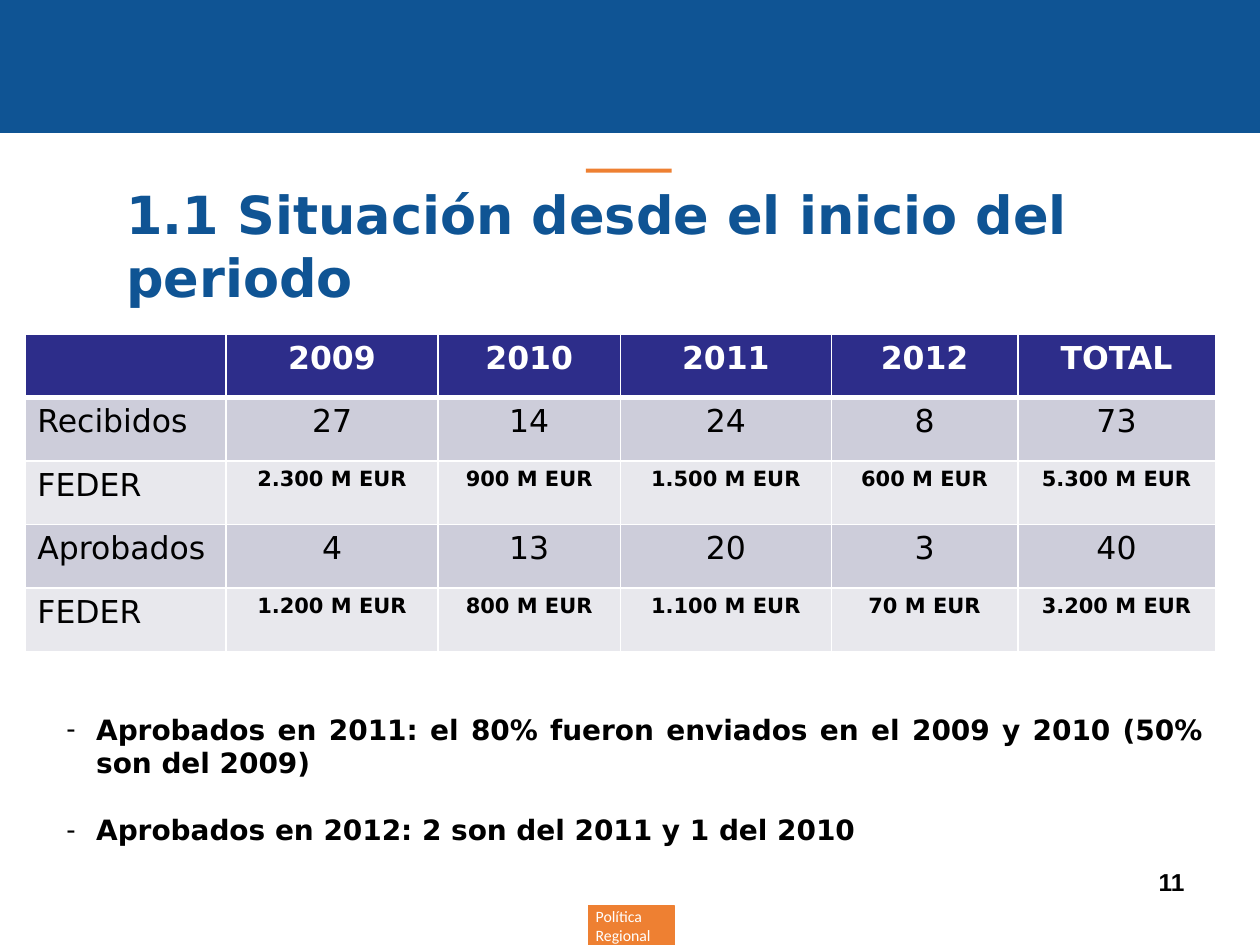
from dataclasses import dataclass

from lxml import etree
from pptx import Presentation
from pptx.dml.color import RGBColor
from pptx.enum.shapes import MSO_SHAPE
from pptx.enum.text import MSO_ANCHOR, PP_ALIGN
from pptx.oxml.ns import qn
from pptx.util import Cm, Pt

RECTANGLE = MSO_SHAPE.RECTANGLE
MIDDLE = MSO_ANCHOR.MIDDLE
LEFT, CENTER, RIGHT, JUSTIFY = PP_ALIGN.LEFT, PP_ALIGN.CENTER, PP_ALIGN.RIGHT, PP_ALIGN.JUSTIFY


@dataclass(frozen=True)
class Theme:
    blue: str = "0F5494"
    orange: str = "EE8032"
    navy: str = "2D2D8A"
    band_dark: str = "CDCDDA"
    band_light: str = "E8E8ED"
    white: str = "FFFFFF"
    black: str = "000000"
    font: str = "DejaVu Sans"
    footer_font: str = "Calibri"
    number_font: str = "Arial"
    title_size: int = 30
    table_size: int = 18
    note_size: int = 16
    number_size: int = 14
    amount_size: int = 12
    footer_size: int = 9


THEME = Theme()


def add_span(para, text, size, color, bold=True, font=THEME.font):
    span = para.add_run()
    span.text = text
    span.font.size = Pt(size)
    span.font.bold = bold
    span.font.name = font
    span.font.color.rgb = RGBColor.from_string(color)


def add_block(page, left, top, width, height, color, line_width=0):
    """Add a plain rectangle, outlined in its own colour if a line width is given."""
    block = page.shapes.add_shape(RECTANGLE, Cm(left), Cm(top), Cm(width), Cm(height))
    block.shadow.inherit = False
    block.fill.solid()
    block.fill.fore_color.rgb = RGBColor.from_string(color)
    if line_width:
        block.line.color.rgb = RGBColor.from_string(color)
        block.line.width = Pt(line_width)
    else:
        block.line.fill.background()
    block.text_frame.word_wrap = True
    block.text_frame.vertical_anchor = MIDDLE
    return block


deck = Presentation()
deck.slide_width, deck.slide_height = Cm(25.4), Cm(19.05)
page = deck.slides.add_slide(deck.slide_layouts[6])

# Header band, accent and footer tag
add_block(page, 0, 0, 25.4, 2.67, THEME.blue, 0.75)
add_block(page, 11.81, 3.4, 1.73, 0.08, THEME.orange)
footer = add_block(page, 11.86, 18.26, 1.73, 0.8, THEME.orange, 0.75)
footer.text_frame.margin_left = Cm(0.15)
para = footer.text_frame.paragraphs[0]
para.alignment = LEFT
add_span(para, "Política Regional", THEME.footer_size, THEME.white, False, THEME.footer_font)

# Title
title = page.shapes.add_textbox(Cm(1.3), Cm(3.73), Cm(22.86), Cm(2.41))
title.text_frame.word_wrap = True
title.text_frame.vertical_anchor = MIDDLE
para = title.text_frame.paragraphs[0]
para._p.get_or_add_pPr().set("marL", str(Cm(1)))
add_span(para, "1.1 Situación desde el inicio del periodo", THEME.title_size, THEME.blue)

# Table of requests received and approved, with the fund amounts
rows = [
    ["", "2009", "2010", "2011", "2012", "TOTAL"],
    ["Recibidos", "27", "14", "24", "8", "73"],
    ["FEDER", "2.300 M EUR", "900 M EUR", "1.500 M EUR", "600 M EUR", "5.300 M EUR"],
    ["Aprobados", "4", "13", "20", "3", "40"],
    ["FEDER", "1.200 M EUR", "800 M EUR", "1.100 M EUR", "70 M EUR", "3.200 M EUR"],
]
column_widths = [4.06, 4.27, 3.68, 4.25, 3.76, 3.98]
row_height = 1.28
table = page.shapes.add_table(
    len(rows), len(column_widths), Cm(0.5), Cm(6.73),
    Cm(sum(column_widths)), Cm(row_height * len(rows)),
).table
for column, width in zip(table.columns, column_widths):
    column.width = Cm(width)

for row_index, values in enumerate(rows):
    table.rows[row_index].height = Cm(row_height)
    is_header = row_index == 0
    is_amount = values[0] == "FEDER"
    if is_header:
        fill, color = THEME.navy, THEME.white
    else:
        fill, color = THEME.band_light if is_amount else THEME.band_dark, THEME.black
    edge_widths = {
        "lnL": 1,
        "lnR": 1,
        "lnT": 3 if row_index == 1 else 1,
        "lnB": 3 if is_header else 1,
    }
    for column_index, value in enumerate(values):
        cell = table.cell(row_index, column_index)
        properties = cell._tc.get_or_add_tcPr()
        for edge, width in edge_widths.items():
            line = etree.SubElement(properties, qn(f"a:{edge}"), w=str(Pt(width)))
            solid = etree.SubElement(line, qn("a:solidFill"))
            etree.SubElement(solid, qn("a:srgbClr"), val=THEME.white)
        cell.fill.solid()
        cell.fill.fore_color.rgb = RGBColor.from_string(fill)
        if value:
            is_label = column_index == 0
            small = is_amount and not is_label
            para = cell.text_frame.paragraphs[0]
            para.alignment = LEFT if is_label else CENTER
            size = THEME.amount_size if small else THEME.table_size
            add_span(para, value, size, color, is_header or small)

# Notes on the approved requests
notes = [
    "Aprobados en 2011: el 80% fueron enviados en el 2009 y 2010 (50% son del 2009)",
    "Aprobados en 2012: 2 son del 2011 y 1 del 2010",
]
notes_frame = add_block(page, 0.69, 13.51, 23.82, 4.4, THEME.white, 2).text_frame
for index, note in enumerate(notes):
    para = notes_frame.add_paragraph() if index else notes_frame.paragraphs[0]
    properties = para._p.get_or_add_pPr()
    properties.set("marL", str(Cm(1)))
    properties.set("indent", str(-Cm(0.6)))
    etree.SubElement(properties, qn("a:buFont"), typeface=THEME.number_font)
    etree.SubElement(properties, qn("a:buChar"), char="-")
    para.alignment = JUSTIFY
    if index:
        para.space_before = Pt(19)
    add_span(para, note, THEME.note_size, THEME.black)

# Page number
number = page.shapes.add_textbox(Cm(18.21), Cm(17.35), Cm(5.92), Cm(1.32))
number.text_frame.word_wrap = True
para = number.text_frame.paragraphs[0]
para.alignment = RIGHT
add_span(para, "11", THEME.number_size, THEME.black, font=THEME.number_font)

deck.save("out.pptx")
